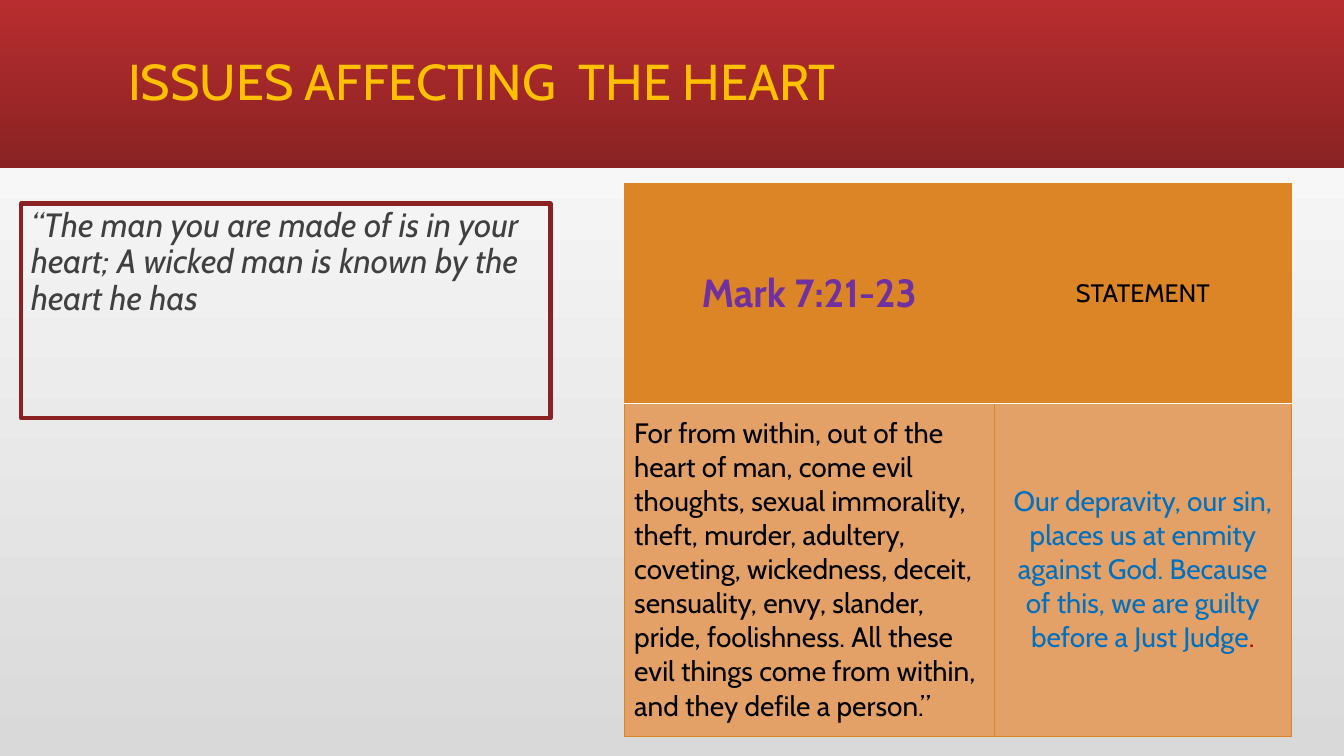
from dataclasses import dataclass

from lxml import etree
from pptx import Presentation
from pptx.dml.color import RGBColor
from pptx.enum import shapes, text
from pptx.oxml import ns
from pptx.util import Inches, Pt

FONT = "Cabin"
RED = RGBColor(0xB8, 0x2D, 0x2F)
DARK_RED = RGBColor(0x8A, 0x22, 0x23)
FULL_STOP_RED = RGBColor(0xC0, 0x00, 0x00)
GOLD = RGBColor(0xFF, 0xC0, 0x00)
ORANGE = RGBColor(0xDB, 0x85, 0x26)
LIGHT_ORANGE = RGBColor(0xE3, 0xA1, 0x67)
PURPLE = RGBColor(0x70, 0x30, 0xA0)
BLUE = RGBColor(0x00, 0x70, 0xC0)
CHARCOAL = RGBColor(0x40, 0x40, 0x40)
GREY = RGBColor(0xD9, 0xD9, 0xD9)
WHITE = RGBColor(0xFF, 0xFF, 0xFF)
BLACK = RGBColor(0x00, 0x00, 0x00)

LEFT, CENTER = text.PP_ALIGN.LEFT, text.PP_ALIGN.CENTER


@dataclass(frozen=True)
class Passage:
    words: str
    size: int
    color: RGBColor
    bold: bool = False
    italic: bool = False


@dataclass(frozen=True)
class TableCell:
    passages: tuple[Passage, ...]
    fill: RGBColor
    align: text.PP_ALIGN = CENTER


TITLE = Passage("ISSUES AFFECTING  THE HEART", 36, GOLD)
QUOTE = Passage(
    "“The man you are made of is in your heart; A wicked man is known by "
    "the heart he has", 24, CHARCOAL, italic=True)
VERSE = Passage(
    "For from within, out of the heart of man, come evil thoughts, sexual "
    "immorality, theft, murder, adultery, coveting, wickedness, deceit, "
    "sensuality, envy, slander, pride, foolishness. All these evil things "
    "come from within, and they defile a person.”", 20, BLACK)
STATEMENT = Passage(
    "Our depravity, our sin, places us at enmity against God. Because of "
    "this, we are guilty before a Just Judge", 20, BLUE)

ROWS = (
    (TableCell((Passage("Mark 7:21-23", 28, PURPLE, bold=True),), ORANGE),
     TableCell((Passage("STATEMENT", 18, BLACK),), ORANGE)),
    (TableCell((VERSE,), LIGHT_ORANGE, LEFT),
     TableCell((STATEMENT, Passage(".", 20, FULL_STOP_RED)), LIGHT_ORANGE)),
)
COLUMN_WIDTHS = (3.67, 2.95)
ROW_HEIGHTS = (2.18, 3.3)


def write(p, *passages: Passage) -> None:
    for passage in passages:
        r = p.add_run()
        r.text = passage.words
        r.font.name = FONT
        r.font.size = Pt(passage.size)
        r.font.bold = passage.bold
        r.font.italic = passage.italic
        r.font.color.rgb = passage.color


def fill_gradient(fill, start: RGBColor, end: RGBColor, angle: int) -> None:
    """Blend two colours; the angle runs counter-clockwise from the left."""
    fill.gradient()
    fill.gradient_angle = angle
    for stop, position, color in zip(fill.gradient_stops, (0, 1), (start, end)):
        stop.position = position
        stop.color.rgb = color


def add_border(cell, side: str, color: RGBColor, width: float) -> None:
    """Put a line on one side (L, R, T or B), ahead of the cell's fill."""
    tc_pr = cell._tc.get_or_add_tcPr()
    line = etree.Element(ns.qn(f"a:ln{side}"), w=str(Pt(width)))
    solid = etree.SubElement(line, ns.qn("a:solidFill"))
    etree.SubElement(solid, ns.qn("a:srgbClr"), val=str(color))
    tc_pr.insert(len(tc_pr), line)


def add_band(s, title) -> None:
    band = s.shapes.add_shape(shapes.MSO_SHAPE.RECTANGLE, 0, 0,
                              Inches(13.33), Inches(1.67))
    band.shadow.inherit = False
    band.line.fill.background()
    fill_gradient(band.fill, RED, DARK_RED, 270)
    title.element.addprevious(band.element)


def format_title(title) -> None:
    title.left, title.top = Inches(1.17), Inches(0.11)
    title.width, title.height = Inches(11), Inches(1.45)
    tf = title.text_frame
    tf.auto_size = text.MSO_AUTO_SIZE.NONE
    tf.vertical_anchor = text.MSO_ANCHOR.MIDDLE
    p = tf.paragraphs[0]
    p.alignment = LEFT
    p.line_spacing = 0.9
    write(p, TITLE)


def add_quote(s) -> None:
    sp = s.shapes.add_textbox(Inches(0.21), Inches(2.02),
                              Inches(5.25), Inches(2.13))
    sp.line.color.rgb = DARK_RED
    sp.line.width = Pt(3)
    sp.text_frame.word_wrap = True
    p = sp.text_frame.paragraphs[0]
    p.line_spacing = 0.9
    write(p, QUOTE)


def add_verse_table(s) -> None:
    table = s.shapes.add_table(
        len(ROWS), len(COLUMN_WIDTHS), Inches(6.19), Inches(1.82),
        Inches(sum(COLUMN_WIDTHS)), Inches(sum(ROW_HEIGHTS))).table
    table.horz_banding = False
    for column, width in zip(table.columns, COLUMN_WIDTHS):
        column.width = Inches(width)
    for i, (row, height) in enumerate(zip(table.rows, ROW_HEIGHTS)):
        row.height = Inches(height)
        for cell, content in zip(row.cells, ROWS[i]):
            for side in "LRTB":
                header_rule = (i, side) in ((0, "B"), (1, "T"))
                add_border(cell, side, *((WHITE, 1) if header_rule else (ORANGE, 0.5)))
            cell.fill.solid()
            cell.fill.fore_color.rgb = content.fill
            cell.vertical_anchor = text.MSO_ANCHOR.MIDDLE
            p = cell.text_frame.paragraphs[0]
            p.alignment = content.align
            write(p, *content.passages)


def main() -> None:
    prs = Presentation()
    prs.slide_width, prs.slide_height = Inches(13.33), Inches(7.5)
    s = prs.slides.add_slide(prs.slide_layouts.get_by_name("Title Only"))
    fill_gradient(s.background.fill, GREY, WHITE, 90)
    title = s.shapes.title
    add_band(s, title)
    format_title(title)
    add_quote(s)
    add_verse_table(s)
    prs.save("out.pptx")


if __name__ == "__main__":
    main()
